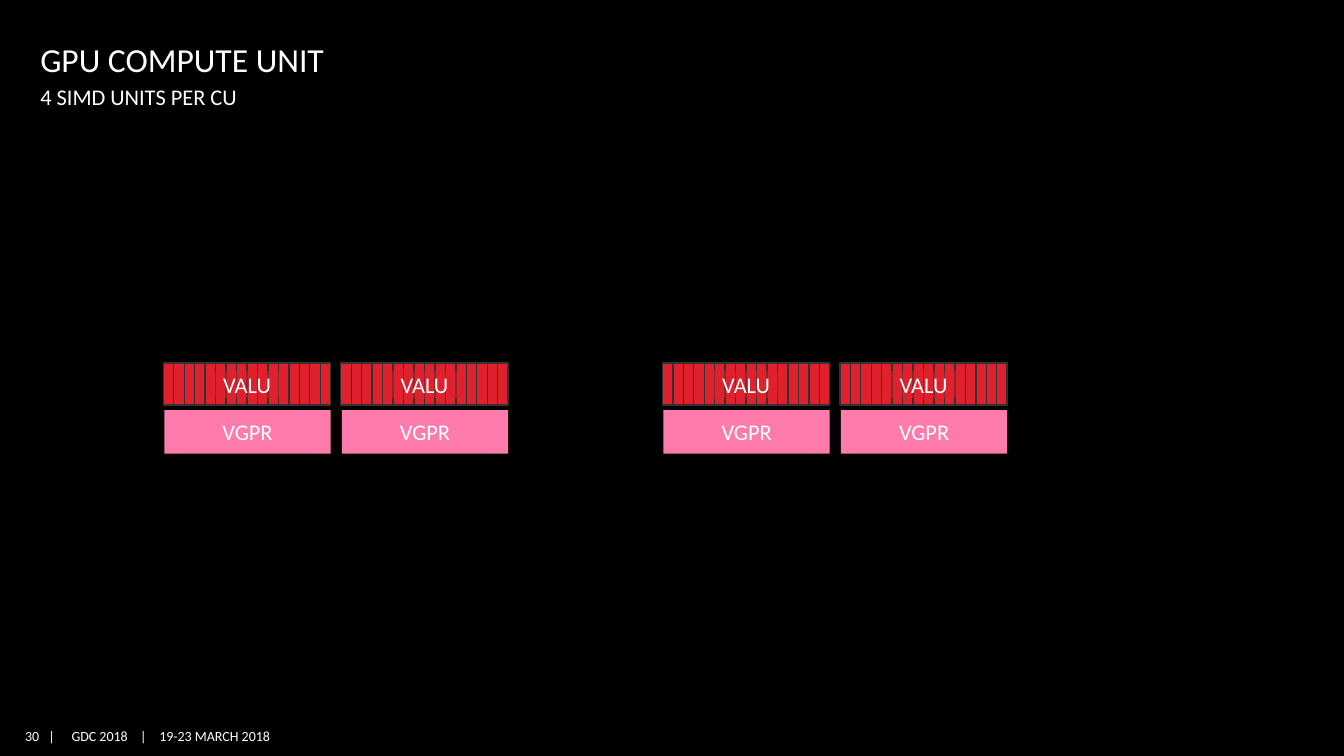
from dataclasses import dataclass

from lxml import etree
from pptx import Presentation
from pptx.dml.color import RGBColor
from pptx.enum.shapes import MSO_CONNECTOR as Connector, MSO_SHAPE as Preset
from pptx.enum.text import MSO_ANCHOR as Anchor, PP_ALIGN as Align
from pptx.oxml.ns import qn
from pptx.util import Inches, Pt

WHITE, BLACK = "FFFFFF", "000000"
RED, PINK, GREY = "DE212C", "FF7BAC", "333333"
LANES = 16


@dataclass(frozen=True)
class Box:
    left: float
    top: float
    width: float
    height: float

    def lengths(self) -> tuple:
        return tuple(Inches(v) for v in (self.left, self.top, self.width, self.height))


@dataclass(frozen=True)
class Label:
    text: str
    box: Box
    size: int
    anchor: Anchor = Anchor.TOP
    align: Align = Align.LEFT
    margins: tuple = (0, 0, 0, 0)
    wrap: bool = True
    tabs: tuple = ()


def color(value: str) -> RGBColor:
    return RGBColor.from_string(value)


def write_text(shape, text: str, *, size: int = 16, anchor=Anchor.MIDDLE,
               align=Align.CENTER, margins: tuple = (0, 0, 0, 0),
               wrap: bool = True, tabs: tuple = ()) -> None:
    frame = shape.text_frame
    frame.word_wrap = wrap
    frame.vertical_anchor = anchor
    (frame.margin_left, frame.margin_top,
     frame.margin_right, frame.margin_bottom) = (Inches(m) for m in margins)
    paragraph = frame.paragraphs[0]
    paragraph.text = text
    paragraph.alignment = align
    if tabs:
        tab_list = etree.SubElement(paragraph._p.get_or_add_pPr(), qn("a:tabLst"))
        for position in tabs:
            etree.SubElement(tab_list, qn("a:tab"), pos=str(Inches(position)), algn="l")
    font = paragraph.runs[0].font
    font.name, font.size = "Calibri", Pt(size)
    font.color.rgb = color(WHITE)


def add_label(slide, label: Label) -> None:
    shape = slide.shapes.add_textbox(*label.box.lengths())
    write_text(shape, label.text, size=label.size, anchor=label.anchor,
               align=label.align, margins=label.margins, wrap=label.wrap,
               tabs=label.tabs)


def add_block(shapes, box: Box, fill: str, line: str | None = None,
              opacity: int = 100):
    shape = shapes.add_shape(Preset.RECTANGLE, *box.lengths())
    shape.shadow.inherit = False
    shape.fill.solid()
    shape.fill.fore_color.rgb = color(fill)
    if opacity < 100:
        fill_color = shape._element.spPr.find(f".//{qn('a:srgbClr')}")
        etree.SubElement(fill_color, qn("a:alpha"), val=str(opacity * 1000))
    if line:
        shape.line.color.rgb = color(line)
        shape.line.width = Pt(1)
    else:
        shape.line.fill.background()
    return shape


def add_lane_divider(shapes, x: float, top: float, bottom: float) -> None:
    divider = shapes.add_connector(Connector.STRAIGHT, Inches(x), Inches(top),
                                   Inches(x), Inches(bottom))
    divider.line.color.rgb = color(GREY)
    divider.line.width = Pt(1)
    etree.SubElement(divider._element.spPr, qn("a:effectLst"))


def add_simd_unit(slide, left: float) -> None:
    shapes = slide.shapes.add_group_shape().shapes
    alu = Box(left, 3.6, 1.66, 0.42)
    add_block(shapes, alu, RED, line=GREY)
    for lane in range(1, LANES):
        add_lane_divider(shapes, left + lane * alu.width / LANES,
                         alu.top, alu.top + alu.height)
    # Half-transparent plate keeps the name readable over the lanes
    plate = add_block(shapes, Box(left + 0.5, 3.68, 0.66, 0.27), RED, opacity=50)
    write_text(plate, "VALU")
    registers = add_block(shapes, Box(left + 0.01, 4.07, 1.65, 0.43), PINK)
    write_text(registers, "VGPR", margins=(0.1, 0.05, 0.1, 0.05))


LABELS = (
    Label("30", Box(0.22, 7.17, 0.17, 0.26), 10, Anchor.MIDDLE, Align.RIGHT,
          (0, 0.04, 0, 0.04), wrap=False),
    Label("|\tGDC 2018\t|\t19-23 MARCH 2018", Box(0.48, 7.17, 2.23, 0.26), 10,
          Anchor.MIDDLE, margins=(0, 0.04, 0, 0.04), wrap=False,
          tabs=(0.23, 0.91, 1.1)),
    Label("4 SIMD UNITS PER CU", Box(0.4, 0.82, 11.4, 0.31), 16),
    Label("GPU COMPUTE UNIT", Box(0.4, 0.27, 10.93, 0.52), 24, Anchor.BOTTOM,
          margins=(0, 0.05, 0, 0)),
)
PAIR_LEFTS = (1.62, 6.57)
UNIT_PITCH = 1.76


def main() -> None:
    presentation = Presentation()
    presentation.slide_width, presentation.slide_height = Inches(13.33), Inches(7.5)
    slide = presentation.slides.add_slide(presentation.slide_layouts[6])
    slide.background.fill.solid()
    slide.background.fill.fore_color.rgb = color(BLACK)

    # Headings and footer
    for label in LABELS:
        add_label(slide, label)

    # Two pairs of SIMD units
    for pair_left in PAIR_LEFTS:
        for unit in range(2):
            add_simd_unit(slide, pair_left + unit * UNIT_PITCH)

    presentation.save("out.pptx")


if __name__ == "__main__":
    main()
